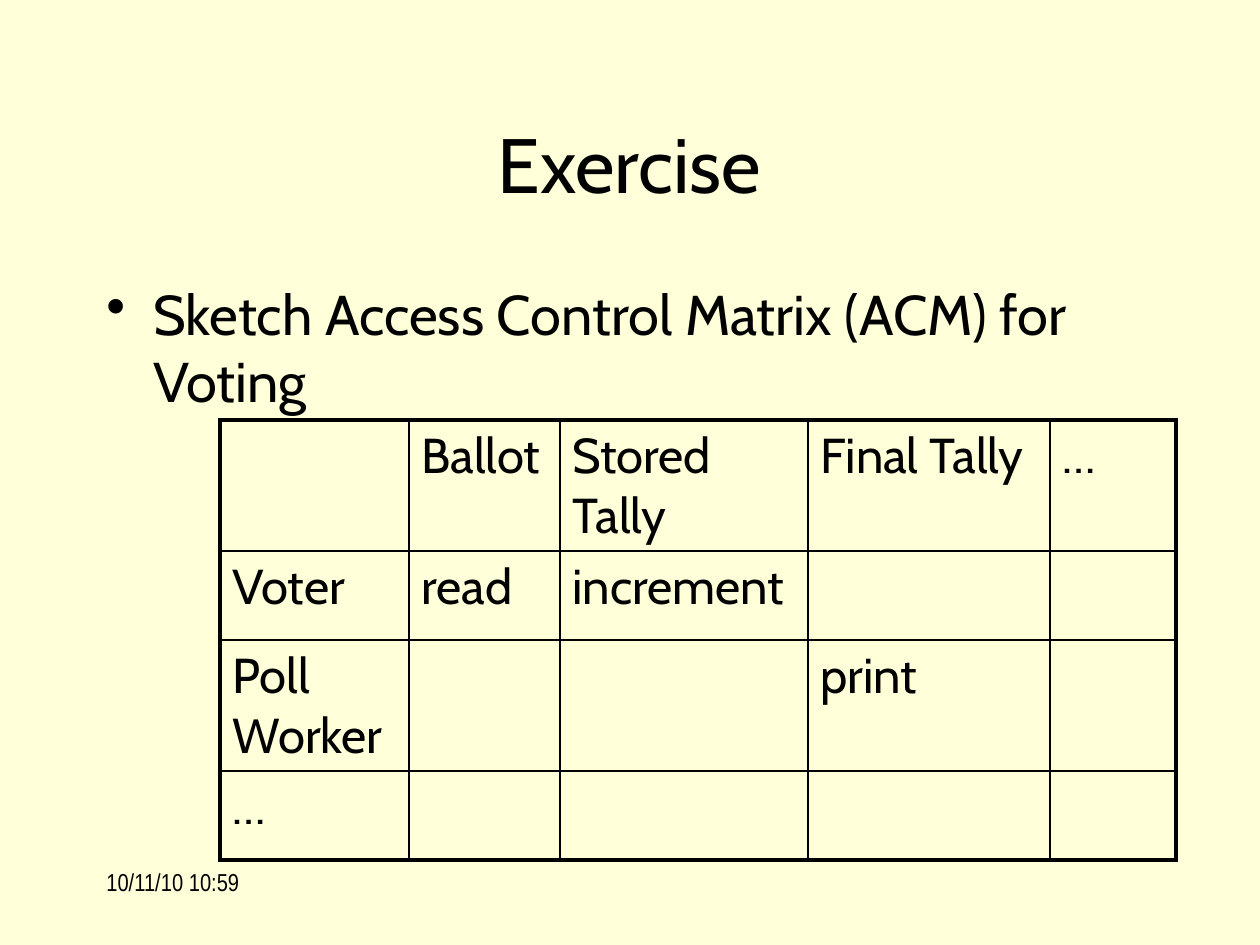
from lxml.etree import SubElement
from pptx import Presentation
from pptx.dml.color import RGBColor
from pptx.enum.text import MSO_ANCHOR as Anchor, PP_ALIGN as Align
from pptx.oxml import parse_xml
from pptx.oxml.ns import nsdecls, qn
from pptx.util import Emu, Pt

BLACK = RGBColor(0x00, 0x00, 0x00)
CREAM = RGBColor(0xFF, 0xFF, 0xD9)
THIN, THICK = Pt(1), Pt(2.25)


def px(length):
    return Emu(round(length * 914400 / 126))


def set_text(frame, text, size, font="Cabin"):
    frame.word_wrap = True
    para = frame.paragraphs[0]
    para.text = text
    para.font.name = font
    para.font.size = Pt(size)
    para.font.color.rgb = BLACK
    return para


deck = Presentation()
deck.slide_width, deck.slide_height = px(1260), px(945)
page = deck.slides.add_slide(deck.slide_layouts[6])
page.background.fill.solid()
page.background.fill.fore_color.rgb = CREAM

# Date
date_box = page.shapes.add_textbox(px(94), px(861), px(262), px(63))
set_text(date_box.text_frame, "10/11/10 10:59", 14, "Arial Narrow")

# Title
title_box = page.shapes.add_textbox(px(94), px(84), px(1071), px(158))
title_box.text_frame.vertical_anchor = Anchor.MIDDLE
set_text(title_box.text_frame, "Exercise", 44).alignment = Align.CENTER

# Bulleted task
task_box = page.shapes.add_textbox(px(94), px(273), px(1071), px(567))
task = set_text(task_box.text_frame, "Sketch Access Control Matrix (ACM) for Voting", 32)
task_props = task._p.get_or_add_pPr()
task_props.set("marL", str(px(47)))
task_props.set("indent", str(-px(47)))
bullet = SubElement(task_props, qn("a:buChar"))
bullet.set("char", "•")
task_props.insert(0, bullet)

# Access control matrix
matrix = [
    ["", "Ballot", "Stored Tally", "Final Tally", "…"],
    ["Voter", "read", "increment", "", ""],
    ["Poll Worker", "", "", "print", ""],
    ["…", "", "", "", ""],
]
column_widths = [189, 151, 248, 242, 126]
row_heights = [131, 89, 131, 89]
last_row, last_column = len(row_heights) - 1, len(column_widths) - 1
table = page.shapes.add_table(
    len(row_heights), len(column_widths),
    px(220), px(420), px(sum(column_widths)), px(sum(row_heights)),
).table
table.first_row = table.horz_banding = False
for column, width in zip(table.columns, column_widths):
    column.width = px(width)
for row, height in zip(table.rows, row_heights):
    row.height = px(height)

for r, labels in enumerate(matrix):
    for c, label in enumerate(labels):
        cell = table.cell(r, c)
        set_text(cell.text_frame, label, 28)
        cell.fill.background()
        # Thick lines on the outer edges, thin ones inside
        edges = [("L", c == 0), ("R", c == last_column), ("T", r == 0), ("B", r == last_row)]
        for place, (side, outer) in enumerate(edges):
            border = parse_xml(
                f'<a:ln{side} {nsdecls("a")} w="{THICK if outer else THIN}">'
                f'<a:solidFill><a:srgbClr val="{BLACK}"/></a:solidFill></a:ln{side}>'
            )
            cell._tc.get_or_add_tcPr().insert(place, border)

deck.save("out.pptx")
